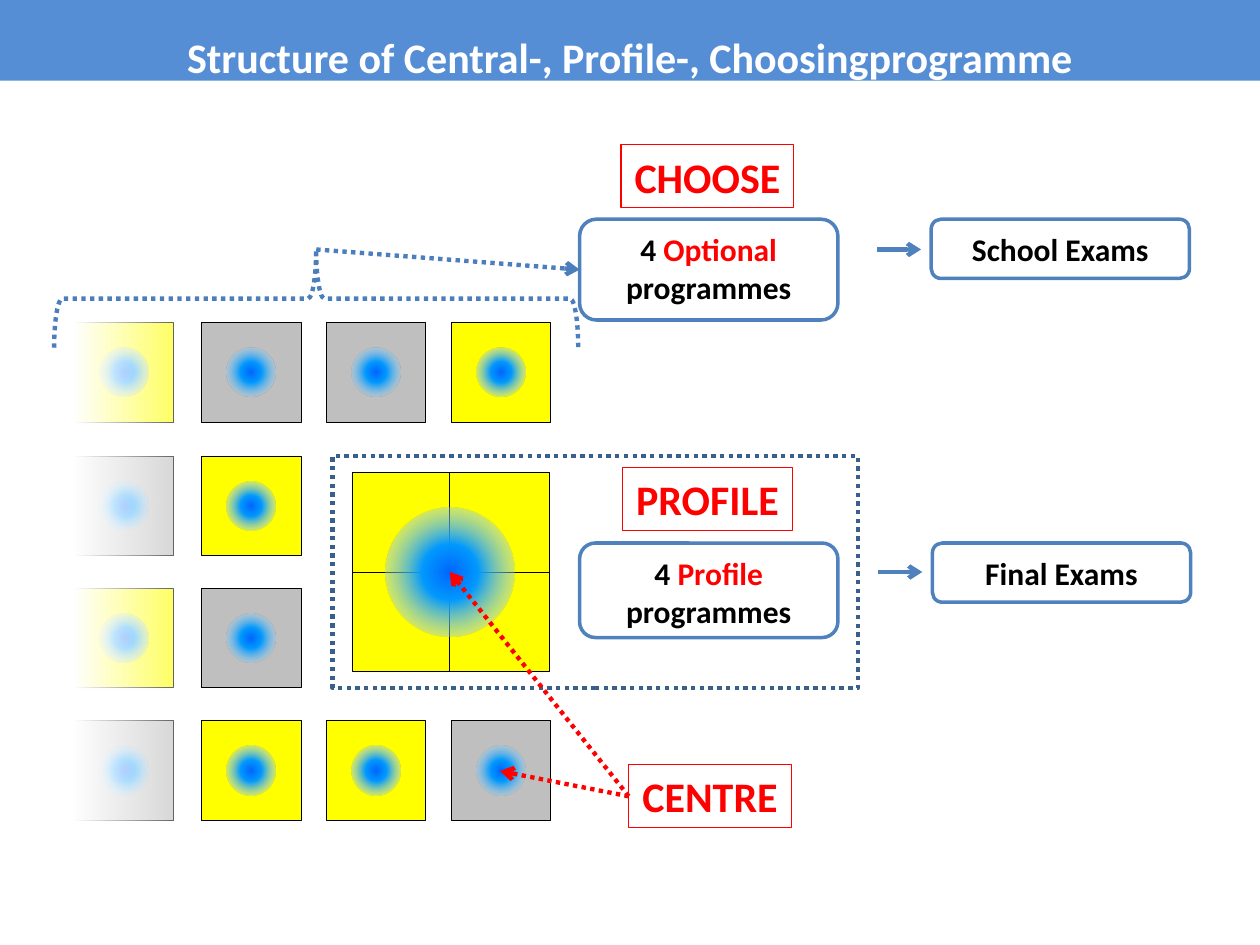
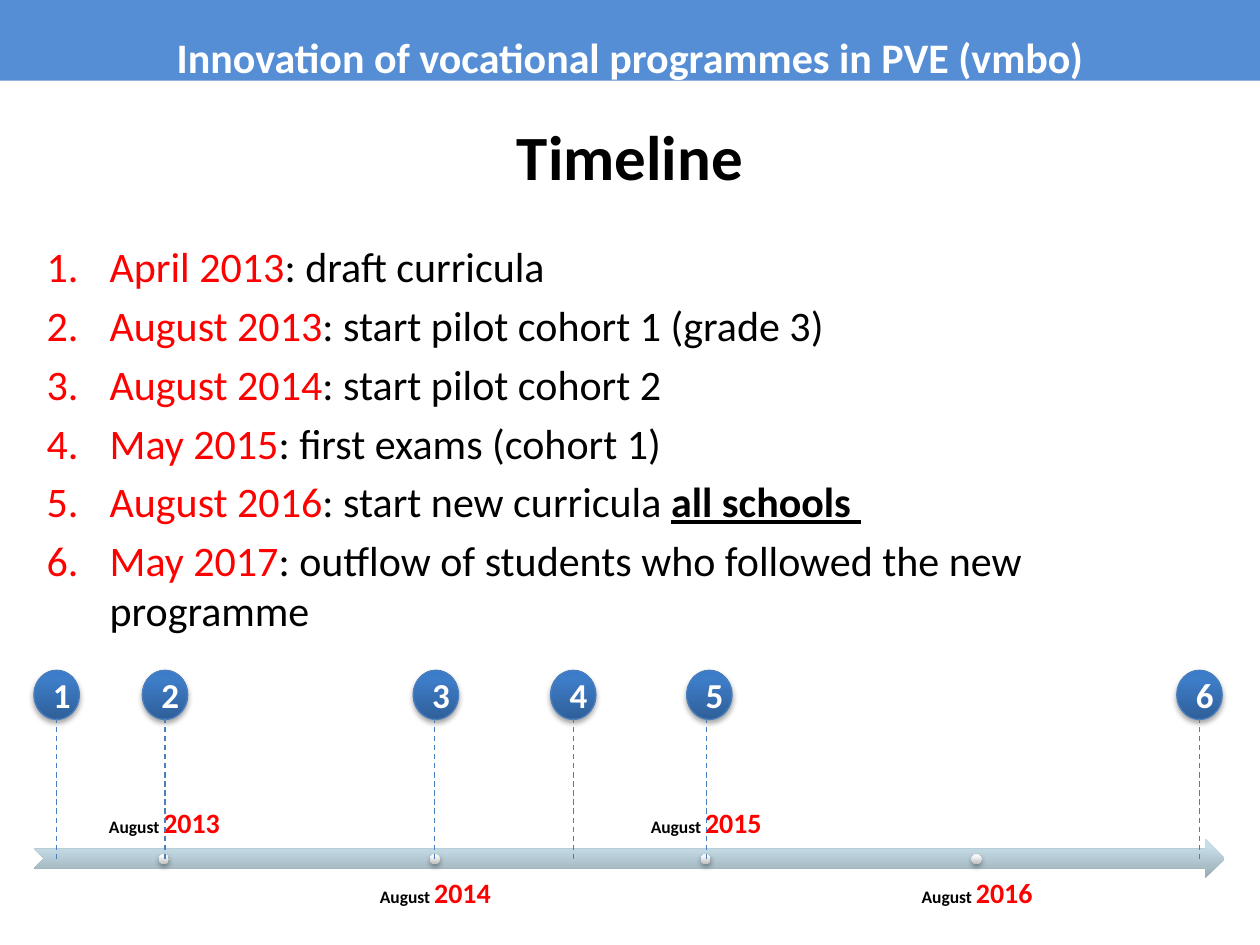
"""Builds two slides on vocational programmes: their structure and their timeline."""
from lxml import etree
from pptx import Presentation
from pptx.dml.color import RGBColor
from pptx.enum.dml import MSO_LINE
from pptx.enum.shapes import MSO_CONNECTOR, MSO_SHAPE
from pptx.enum.text import MSO_ANCHOR, MSO_AUTO_SIZE, PP_ALIGN
from pptx.oxml import parse_xml
from pptx.oxml.ns import nsdecls, qn
from pptx.util import Inches, Pt

RECTANGLE, ROUNDED, OVAL = MSO_SHAPE.RECTANGLE, MSO_SHAPE.ROUNDED_RECTANGLE, MSO_SHAPE.OVAL
BRACE, NOTCHED_ARROW = MSO_SHAPE.RIGHT_BRACE, MSO_SHAPE.NOTCHED_RIGHT_ARROW
STRAIGHT = MSO_CONNECTOR.STRAIGHT
DOTTED, DASHED = MSO_LINE.ROUND_DOT, MSO_LINE.DASH
TOP, MIDDLE, BOTTOM = MSO_ANCHOR.TOP, MSO_ANCHOR.MIDDLE, MSO_ANCHOR.BOTTOM
CENTER, LEFT = PP_ALIGN.CENTER, PP_ALIGN.LEFT
FIXED_SIZE = MSO_AUTO_SIZE.NONE

FONT = "Calibri"
COLORS = {
    "white": "FFFFFF", "black": "000000", "red": "FF0000", "yellow": "FFFF00",
    "gray": "BFBFBF", "band": "558ED5", "blue": "4F81BD", "pin": "4B7EBC", "frame": "3A5F8C",
}
CIRCULAR = '<a:path path="circle"><a:fillToRect l="50000" t="50000" r="50000" b="50000"/></a:path>'
ACROSS = '<a:lin ang="0" scaled="0"/>'
UPWARD = '<a:lin ang="16200000" scaled="0"/>'
GRADIENTS = {
    "glow": ([(0, "0066FF", 100), (30, "0099FF", 100), (100, "FDEADA", 0)], CIRCULAR),
    "fade": ([(0, "FFFFFF", 100), (100, "FFFFFF", 39)], ACROSS),
    "arrow": ([(0, "98AAB2", 100), (80, "C5DDE7", 100), (100, "C6DEE9", 100)], UPWARD),
    "dot": ([(0, "BEBEBE", 100), (80, "F7F7F7", 100), (100, "F8F8F8", 100)], UPWARD),
    "ball": ([(0, "2F5F99", 100), (80, "3D7CC7", 100), (100, "3A7CCB", 100)], UPWARD),
}
SHADOW = (
    '<a:outerShdw blurRad="39370" dist="22860" dir="5400000" rotWithShape="0">'
    '<a:srgbClr val="000000"><a:alpha val="35000"/></a:srgbClr></a:outerShdw>'
)


def paint(shape, fill=None, line=None, width=0.5, dash=None, arrow=False, shadow=False):
    """Sets fill, line, arrowhead and shadow of a shape or connector."""
    properties = shape._element.spPr
    if hasattr(shape, "fill"):
        shape.fill.background()
        if fill in GRADIENTS:
            stops, direction = GRADIENTS[fill]
            stop_xml = "".join(
                f'<a:gs pos="{position * 1000}"><a:srgbClr val="{color}">'
                f'<a:alpha val="{alpha * 1000}"/></a:srgbClr></a:gs>'
                for position, color, alpha in stops
            )
            gradient = parse_xml(
                f'<a:gradFill {nsdecls("a")} rotWithShape="1">'
                f"<a:gsLst>{stop_xml}</a:gsLst>{direction}</a:gradFill>"
            )
            properties.replace(properties.find(qn("a:noFill")), gradient)
        elif fill:
            shape.fill.solid()
            shape.fill.fore_color.rgb = RGBColor.from_string(COLORS[fill])
    if line:
        shape.line.color.rgb = RGBColor.from_string(COLORS[line])
        shape.line.width = Pt(width)
        shape.line.dash_style = dash
    else:
        shape.line.fill.background()
    if arrow:
        etree.SubElement(properties.find(qn("a:ln")), qn("a:tailEnd"), type="arrow")
    effects = SHADOW if shadow else ""
    properties.append(parse_xml(f'<a:effectLst {nsdecls("a")}>{effects}</a:effectLst>'))


def write(shape, paragraphs, frame_format=None, paragraph_format=None, **font_format):
    """Writes paragraphs, each a list of (text, color, font values) runs."""
    frame = shape.text_frame
    frame_values = {"word_wrap": True, "auto_size": FIXED_SIZE, "vertical_anchor": TOP}
    for name, value in (frame_values | (frame_format or {})).items():
        setattr(frame, name, value)
    for index, runs in enumerate(paragraphs):
        paragraph = frame.add_paragraph() if index else frame.paragraphs[0]
        for name, value in ({"alignment": CENTER} | (paragraph_format or {})).items():
            setattr(paragraph, name, value)
        for text, color, values in runs:
            run = paragraph.add_run()
            run.text = text
            run.font.color.rgb = RGBColor.from_string(COLORS[color])
            for name, value in ({"name": FONT} | font_format | values).items():
                setattr(run.font, name, value)


presentation = Presentation()
presentation.slide_width, presentation.slide_height = Inches(10), Inches(7.5)
structure = presentation.slides.add_slide(presentation.slide_layouts[5])
timeline = presentation.slides.add_slide(presentation.slide_layouts[1])

band_area = [Inches(length) for length in (0, 0, 10, 0.64)]
bands = [
    (structure.shapes.title, "Structure of Central-, Profile-, Choosingprogramme"),
    (timeline.shapes.add_shape(RECTANGLE, *band_area),
     "Innovation of vocational programmes in PVE (vmbo)"),
]
for band, heading in bands:
    band.left, band.top, band.width, band.height = band_area
    paint(band, "band")
    write(band, [[(heading, "white", {})]], paragraph_format={"line_spacing": 1.5},
          size=Pt(24), bold=True)

tile_size, glow_size = 0.79, 0.39
glow_inset = (tile_size - glow_size) / 2
for left in (2.8, 3.57):
    for top in (3.75, 4.54):
        tile = structure.shapes.add_shape(
            RECTANGLE, Inches(left), Inches(top), Inches(tile_size), Inches(tile_size))
        paint(tile, "yellow", "black")
center_glow = structure.shapes.add_shape(
    OVAL, Inches(3.06), Inches(4.03), Inches(1.02), Inches(1.02))
paint(center_glow, "glow")

tile_lefts = (0.59, 1.6, 2.59, 3.58)
tile_rows = [
    (2.56, ("yellow", "gray", "gray", "yellow")),
    (3.62, ("gray", "yellow")),
    (4.67, ("yellow", "gray")),
    (5.72, ("gray", "yellow", "yellow", "gray")),
]
for top, tile_colors in tile_rows:
    for left, color in zip(tile_lefts, tile_colors):
        tile = structure.shapes.add_shape(
            RECTANGLE, Inches(left), Inches(top), Inches(tile_size), Inches(tile_size))
        paint(tile, color, "black")
        glow = structure.shapes.add_shape(
            OVAL, Inches(left + glow_inset), Inches(top + glow_inset),
            Inches(glow_size), Inches(glow_size))
        paint(glow, "glow")
    fade = structure.shapes.add_shape(
        RECTANGLE, Inches(tile_lefts[0]), Inches(top - 0.01), Inches(tile_size), Inches(0.83))
    paint(fade, "fade")

profile_frame = structure.shapes.add_shape(
    RECTANGLE, Inches(2.64), Inches(3.62), Inches(4.17), Inches(1.84))
paint(profile_frame, None, "frame", 2.5, DOTTED)
brace = structure.shapes.add_shape(
    BRACE, Inches(2.12), Inches(0.29), Inches(0.78), Inches(4.16))
brace.rotation = 270
paint(brace, None, "pin", 2.5, DOTTED)

boxes = {}
box_rows = [
    ("Optional", 4.6, 1.74, 0.8, TOP,
     [("4 ", "black", {}), ("Optional ", "red", {}), ("programmes", "black", {})]),
    ("Profile", 4.6, 4.31, 0.75, TOP,
     [("4 ", "black", {}), ("Profile ", "red", {}), ("programmes", "black", {})]),
    ("School", 7.39, 1.74, 0.47, MIDDLE, [("School Exams", "black", {})]),
    ("Final", 7.4, 4.31, 0.47, MIDDLE, [("Final Exams", "black", {})]),
]
for name, left, top, height, anchor, runs in box_rows:
    boxes[name] = structure.shapes.add_shape(
        ROUNDED, Inches(left), Inches(top), Inches(2.05), Inches(height))
    paint(boxes[name], "white", "blue", 2)
    write(boxes[name], [runs], {"vertical_anchor": anchor}, size=Pt(18), bold=True)

labels = {}
label_rows = [("CHOOSE", 4.93, 1.15, 1.37), ("PROFILE", 4.94, 3.71, 1.35),
              ("CENTRE", 4.99, 6.07, 1.29)]
for text, left, top, width in label_rows:
    labels[text] = structure.shapes.add_shape(
        RECTANGLE, Inches(left), Inches(top), Inches(width), Inches(0.5))
    paint(labels[text], None, "red", 0.75)
    write(labels[text], [[(text, "red", {})]], {"word_wrap": False}, size=Pt(24), bold=True)

arrow_rows = [
    ((6.96, 1.98, 7.31, 1.98), "blue", None, None, None),
    ((6.97, 4.54, 7.32, 4.54), "blue", None, None, None),
    ((2.51, 1.98, 4.6, 2.14), "pin", DOTTED, None, boxes["Optional"]),
    ((4.99, 6.32, 3.57, 4.54), "red", DOTTED, labels["CENTRE"], None),
    ((4.99, 6.32, 3.97, 6.12), "red", DOTTED, labels["CENTRE"], None),
]
for ends, color, dash, source, target in arrow_rows:
    arrow = structure.shapes.add_connector(STRAIGHT, *[Inches(length) for length in ends])
    if source:
        arrow.begin_connect(source, 1)
    if target:
        arrow.end_connect(target, 1)
    paint(arrow, None, color, 2.5, dash, arrow=True)

title, body = timeline.shapes.title, timeline.placeholders[1]
for placeholder, area in ((title, (0.5, 0.94, 9, 0.59)), (body, (0.27, 1.86, 9.45, 3.05))):
    placeholder.left, placeholder.top, placeholder.width, placeholder.height = [
        Inches(length) for length in area]
write(title, [[("Timeline", "black", {})]], {"vertical_anchor": MIDDLE}, size=Pt(36), bold=True)

milestones = [
    ("April 2013", ": draft curricula", ""),
    ("August 2013", ": start pilot cohort 1 (grade 3)", ""),
    ("August 2014", ": start pilot cohort 2", ""),
    ("May 2015", ": first exams (cohort 1)", ""),
    ("August 2016", ": start new curricula ", "all schools "),
    ("May 2017", ": outflow of students who followed the new programme", ""),
]
milestone_runs = []
for date, event, stress in milestones:
    runs = [(date, "red", {}), (event, "black", {})]
    if stress:
        runs.append((stress, "black", {"bold": True, "underline": True}))
    milestone_runs.append(runs)
write(body, milestone_runs, paragraph_format={"alignment": LEFT}, size=Pt(24))
for paragraph in body.text_frame.paragraphs:
    properties = paragraph._p.get_or_add_pPr()
    properties.set("marL", str(Inches(0.5)))
    properties.set("indent", str(Inches(-0.5)))
    etree.SubElement(properties, qn("a:buFont"), typeface="+mj-lt")
    etree.SubElement(properties, qn("a:buAutoNum"), type="arabicPeriod")

time_arrow = timeline.shapes.add_shape(
    NOTCHED_ARROW, Inches(0.27), Inches(6.66), Inches(9.45), Inches(0.31))
paint(time_arrow, "arrow")

year_step = 2.15
label_margins = {f"margin_{side}": Inches(0.08) for side in ("left", "top", "right", "bottom")}
for index, year in enumerate(("2013", "2014", "2015", "2016")):
    label_top, anchor = (6.9, TOP) if index % 2 else (6.43, BOTTOM)
    year_label = timeline.shapes.add_textbox(
        Inches(0.28 + year_step * index), Inches(label_top), Inches(2.05), Inches(0.31))
    write(year_label, [[("August ", "black", {"size": Pt(10)}), (year, "red", {"size": Pt(16)})]],
          label_margins | {"vertical_anchor": anchor}, {"line_spacing": 0.9}, bold=True)
    dot = timeline.shapes.add_shape(
        OVAL, Inches(1.26 + year_step * index), Inches(6.78), Inches(0.08), Inches(0.08))
    paint(dot, "dot", shadow=True)

pins = [(0.27, 0.45), (1.13, 1.31), (3.28, 3.45), (4.37, 4.55), (5.45, 5.61), (9.34, 9.52)]
for number, (ball_left, stem_left) in enumerate(pins, 1):
    ball = timeline.shapes.add_shape(
        OVAL, Inches(ball_left), Inches(5.32), Inches(0.36), Inches(0.39))
    paint(ball, "ball", "pin", 0.75, shadow=True)
    write(ball, [[(str(number), "white", {})]], {"vertical_anchor": MIDDLE},
          size=Pt(20), bold=True)
    stem = timeline.shapes.add_connector(
        STRAIGHT, Inches(stem_left), Inches(5.7), Inches(stem_left), Inches(6.82))
    paint(stem, None, "pin", 0.75, DASHED)

presentation.save("out.pptx")
